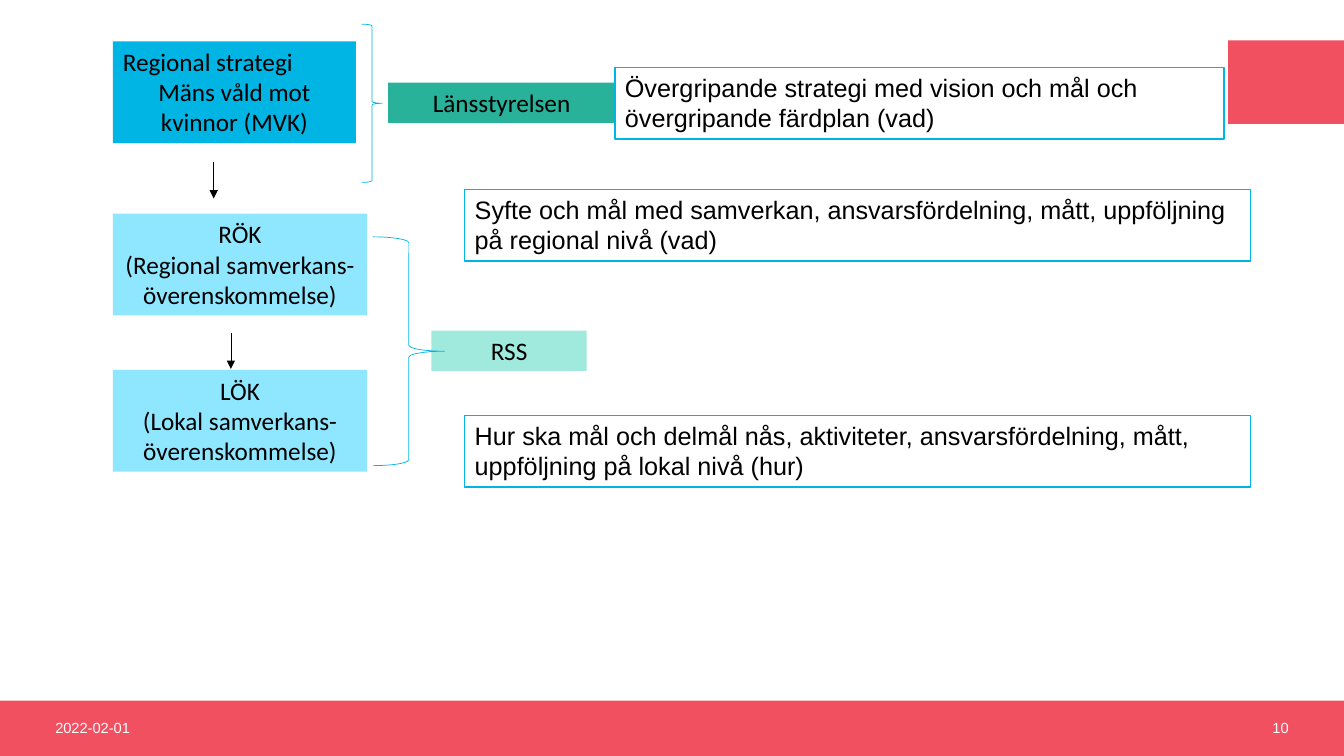
"""Build a slide on regional and local strategy agreements."""
from lxml import etree
from pptx import Presentation
from pptx.dml.color import RGBColor
from pptx.enum.shapes import MSO_CONNECTOR, MSO_SHAPE
from pptx.enum.text import MSO_ANCHOR, PP_ALIGN
from pptx.oxml.ns import qn
from pptx.util import Inches, Pt

RECTANGLE, BRACE = MSO_SHAPE.RECTANGLE, MSO_SHAPE.RIGHT_BRACE
STRAIGHT = MSO_CONNECTOR.STRAIGHT
TOP, MIDDLE = MSO_ANCHOR.TOP, MSO_ANCHOR.MIDDLE
LEFT, CENTER, RIGHT = PP_ALIGN.LEFT, PP_ALIGN.CENTER, PP_ALIGN.RIGHT
CORAL = RGBColor(0xF1, 0x50, 0x60)
BLUE = RGBColor(0x00, 0xB4, 0xE4)
PALE_BLUE = RGBColor(0x8E, 0xE7, 0xFF)
GREEN = RGBColor(0x28, 0xB2, 0x9A)
PALE_GREEN = RGBColor(0xA0, 0xEA, 0xDD)
WHITE = RGBColor(0xFF, 0xFF, 0xFF)
BLACK = RGBColor(0x00, 0x00, 0x00)


def write_text(frame, lines, font="Calibri", size=18, color=BLACK,
               aligns=(CENTER,), anchor=TOP):
    """Write one paragraph per line; the last alignment serves the rest."""
    frame.word_wrap = True
    frame.vertical_anchor = anchor
    for index, line in enumerate(lines):
        para = frame.paragraphs[0] if index == 0 else frame.add_paragraph()
        para.alignment = aligns[min(index, len(aligns) - 1)]
        span = para.add_run()
        span.text = line
        span.font.name = font
        span.font.size = Pt(size)
        span.font.color.rgb = color


class SlideBuilder:
    """Holds the slide and draws its elements in one style."""

    def __init__(self, slide):
        """Keep the slide to draw on."""
        self.shapes = slide.shapes

    def shape(self, kind, area, fill=None, line=None, width=1):
        """Add a preset shape without shadow."""
        shape = self.shapes.add_shape(kind, *map(Inches, area))
        shape.shadow.inherit = False
        if fill is None:
            shape.fill.background()
        else:
            shape.fill.solid()
            shape.fill.fore_color.rgb = fill
        if line is None:
            shape.line.fill.background()
        else:
            shape.line.color.rgb = line
            shape.line.width = Pt(width)
        return shape

    def box(self, area, fill, lines, **style):
        """Add a filled box with centred text."""
        write_text(self.shape(RECTANGLE, area, fill).text_frame, lines, **style)

    def note(self, area, text):
        """Add an outlined white box with explanatory text."""
        box = self.shape(RECTANGLE, area, WHITE, BLUE)
        write_text(box.text_frame, [text], font="Arial", aligns=(LEFT,))

    def brace(self, area):
        """Add a thin right brace."""
        self.shape(BRACE, area, line=BLUE, width=0.5)

    def footer(self, left, text, align):
        """Add a footer text on the bottom band."""
        box = self.shapes.add_textbox(*map(Inches, (left, 6.95, 3, 0.54)))
        write_text(box.text_frame, [text], font="Arial", size=10.5,
                   color=WHITE, aligns=(align,), anchor=MIDDLE)

    def down_arrow(self, x, top, length=0.36):
        """Add a thin arrow pointing down."""
        arrow = self.shapes.add_connector(
            STRAIGHT, *map(Inches, (x, top, x, top + length)))
        arrow.line.color.rgb = BLACK
        arrow.line.width = Pt(0.5)
        etree.SubElement(arrow.line._get_or_add_ln(), qn("a:tailEnd"), type="triangle")
        etree.SubElement(arrow._element.spPr, qn("a:effectLst"))


def main():
    """Draw the slide and save the deck."""
    deck = Presentation()
    deck.slide_width, deck.slide_height = Inches(13.33), Inches(7.5)
    page = SlideBuilder(deck.slides.add_slide(deck.slide_layouts[6]))

    page.shape(RECTANGLE, (0, 6.95, 13.33, 0.55), CORAL)
    page.shape(RECTANGLE, (12.18, 0.4, 1.15, 0.83), CORAL)
    page.footer(0.45, "2022-02-01", LEFT)
    page.footer(9.88, "10", RIGHT)

    page.box((3.85, 0.82, 2.25, 0.4), GREEN, ["Länsstyrelsen"])
    page.box((4.28, 3.28, 1.54, 0.4), PALE_GREEN, ["RSS"])
    page.box((1.12, 0.41, 2.41, 1.01), BLUE,
             ["Regional strategi", "Mäns våld mot kvinnor (MVK)"],
             aligns=(LEFT, CENTER))
    for top, name, level in ((2.12, "RÖK", "Regional"), (3.67, "LÖK", "Lokal")):
        page.box((1.12, top, 2.52, 1.01), PALE_BLUE,
                 [name, f"({level} samverkans-", "överenskommelse)"])

    page.down_arrow(2.12, 1.61)
    page.down_arrow(2.29, 3.3)
    page.brace((3.7, 2.35, 0.71, 2.27))
    page.note((6.1, 0.67, 6.04, 0.71),
              "Övergripande strategi med vision och mål och övergripande färdplan (vad)")
    page.note((4.61, 1.88, 7.79, 0.71),
              "Syfte och mål med samverkan, ansvarsfördelning, mått, "
              "uppföljning på regional nivå (vad)")
    page.note((4.61, 4.12, 7.79, 0.71),
              "Hur ska mål och delmål nås, aktiviteter, ansvarsfördelning, mått, "
              "uppföljning på lokal nivå (hur)")
    page.brace((3.59, 0.24, 0.2, 1.57))
    deck.save("out.pptx")


if __name__ == "__main__":
    main()
